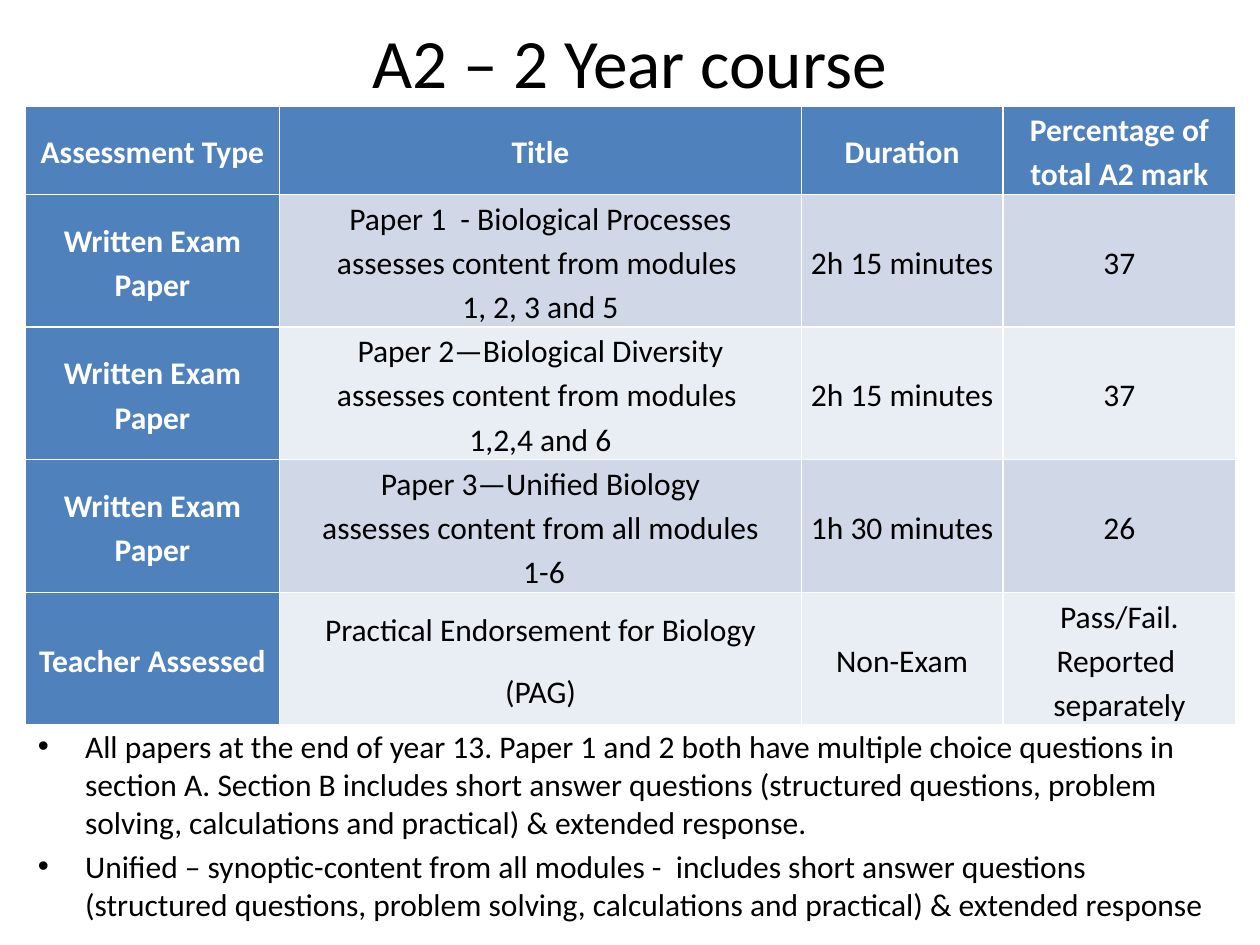
"""Build a slide that sums up the papers of the A2 two year biology course."""
import pptx
import pptx.util
import pptx.dml.color
import pptx.enum.text

Inches, Pt = pptx.util.Inches, pptx.util.Pt
ALIGN = pptx.enum.text.PP_ALIGN
MIDDLE = pptx.enum.text.MSO_ANCHOR.MIDDLE

THEME = {
    "font": "Calibri", "title": 39.6, "text": 18,
    "ink": "000000", "light": "FFFFFF", "head": "4F81BD",
    "bands": ("D0D8E8", "E9EDF4"),
}

TITLE = "A2 – 2 Year course"
ROWS = [
    ("Assessment Type", "Title", "Duration", "Percentage of total A2 mark"),
    ("Written Exam Paper",
     "Paper 1  - Biological Processes\nassesses content from modules \n1, 2, 3 and 5",
     "2h 15 minutes", "37"),
    ("Written Exam Paper",
     "Paper 2—Biological Diversity\nassesses content from modules \n1,2,4 and 6",
     "2h 15 minutes", "37"),
    ("Written Exam Paper",
     "Paper 3—Unified Biology\nassesses content from all modules\n 1-6",
     "1h 30 minutes", "26"),
    ("Teacher Assessed", "Practical Endorsement for Biology\n(PAG)",
     "Non-Exam", "Pass/Fail. Reported  separately"),
]
NOTES = [
    "All papers at the end of year 13. Paper 1 and 2 both have multiple choice "
    "questions in section A. Section B includes short answer questions (structured "
    "questions, problem solving, calculations and practical) & extended response.",
    "Unified – synoptic-content from all modules -  includes short answer questions "
    "(structured questions, problem solving, calculations and practical) & extended response",
]
WIDTHS = (2.02, 4.14, 1.6, 1.85)
HEIGHTS = (0.49, 0.7, 0.7, 0.7, 0.68)
LEFT, WIDE = 0.2, sum(WIDTHS)


def tint(code):
    return pptx.dml.color.RGBColor.from_string(code)


def write(frame, text, size=THEME["text"], color=THEME["ink"], bold=False,
          align=None, line=None, after=None):
    frame.text = text
    for para in frame.paragraphs:
        para.alignment = align
        para.line_spacing = line
        para.space_after = after
        for run in para.runs:
            font = run.font
            font.name, font.size, font.bold = THEME["font"], Pt(size), bold
            font.color.rgb = tint(color)


def place(shape, left, top, width, height):
    shape.left, shape.top = Inches(left), Inches(top)
    shape.width, shape.height = Inches(width), Inches(height)


def fill_cell(cell, text, row, col):
    head = row == 0 or col == 0
    cell.fill.solid()
    cell.fill.fore_color.rgb = tint(THEME["head"] if head else THEME["bands"][(row - 1) % 2])
    cell.vertical_anchor = MIDDLE
    cell.margin_left = cell.margin_right = Inches(0.07)
    cell.margin_top = cell.margin_bottom = 0
    tight = text.count("\n") > 1
    write(cell.text_frame, text, color=THEME["light" if head else "ink"], bold=head,
          align=ALIGN.CENTER, line=1.15, after=Pt(0 if tight else 10))


def add_grid(slide):
    frame = slide.shapes.add_table(len(ROWS), len(WIDTHS), Inches(LEFT), Inches(0.84),
                                   Inches(WIDE), Inches(4.73))
    table = frame.table
    table.first_col = True
    for col, width in zip(table.columns, WIDTHS):
        col.width = Inches(width)
    for row, height in zip(table.rows, HEIGHTS):
        row.height = Inches(height)
    for r, row in enumerate(ROWS):
        for c, text in enumerate(row):
            fill_cell(table.cell(r, c), text, r, c)
    frame.height = Inches(4.73)


def main():
    deck = pptx.Presentation()
    deck.slide_width, deck.slide_height = Inches(10), Inches(7.5)
    slide = deck.slides.add_slide(deck.slide_layouts[1])
    title, body = slide.placeholders
    place(title, 0.5, 0.13, 9, 0.71)
    place(body, LEFT, 5.72, WIDE, 1.65)
    for shape in (title, body):
        shape.text_frame.auto_size = pptx.enum.text.MSO_AUTO_SIZE.NONE
    write(title.text_frame, TITLE, size=THEME["title"], align=ALIGN.CENTER)
    write(body.text_frame, "\n".join(NOTES))
    add_grid(slide)
    deck.save("out.pptx")


if __name__ == "__main__":
    main()
